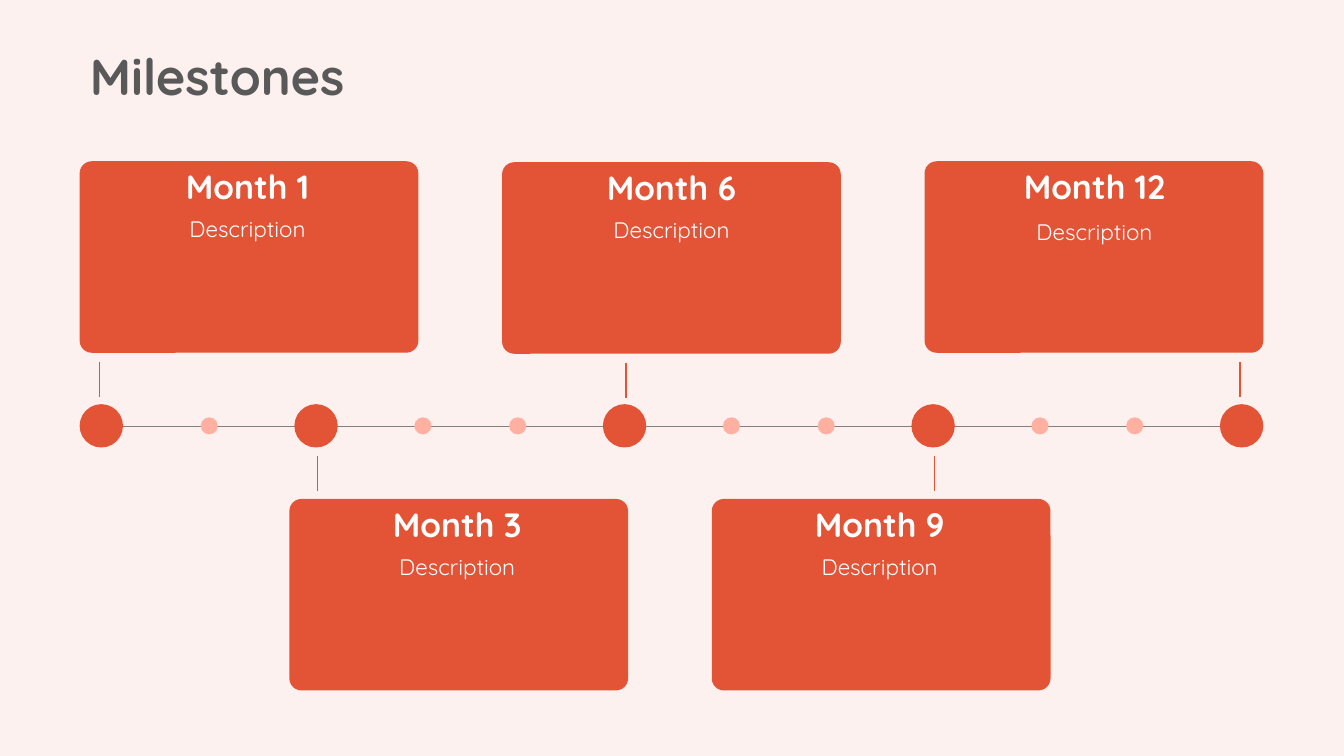
from dataclasses import dataclass

from lxml.etree import SubElement
from pptx import Presentation
from pptx.dml.color import RGBColor
from pptx.enum.shapes import MSO_CONNECTOR, MSO_SHAPE
from pptx.enum.text import MSO_ANCHOR, MSO_AUTO_SIZE, PP_ALIGN
from pptx.oxml.ns import qn
from pptx.slide import Slide
from pptx.text.text import TextFrame
from pptx.util import Inches, Pt

COLOURS = {
    "background": "FDF1EF",
    "title": "595959",
    "accent": "E35336",
    "minor": "FFB0A1",
    "axis": "808080",
    "label": "FFFFFF",
}
FONT = "Quicksand"
CARD_WIDTH, CARD_HEIGHT = 3.36, 1.9
DOT_SIZE, MINOR_SIZE = 0.43, 0.17
DOT_TOP, MINOR_TOP, AXIS_Y = 4.01, 4.14, 4.23
TICK_LENGTH = 0.35
FIRST_DOT, SECOND_DOT, QUARTER = 0.79, 2.92, 3.06
QUARTER_DOTS = [SECOND_DOT + QUARTER * step for step in range(4)]
MINOR_OFFSETS = (1.19, 2.13)


@dataclass
class Milestone:
    month: str
    left: float
    top: float
    dot_left: float
    tick_x: float
    label_inset: float = 0.2
    label_width: float = 2.93
    label_height: float = 0.98
    heading_gap: float = 6

    @property
    def tick_top(self) -> float:
        above_axis = self.top < AXIS_Y
        return self.top + CARD_HEIGHT + 0.09 if above_axis else self.top - 0.08 - TICK_LENGTH


MILESTONES = [
    Milestone("Month 1", 0.79, 1.6, FIRST_DOT, 0.99),
    Milestone("Month 3", 2.87, 4.95, QUARTER_DOTS[0], 3.15),
    Milestone("Month 6", 4.98, 1.61, QUARTER_DOTS[1], 6.21, 0.17, 3.02),
    Milestone("Month 9", 7.06, 4.95, QUARTER_DOTS[2], 9.27),
    Milestone("Month 12", 9.17, 1.6, QUARTER_DOTS[3], 12.3, 0.11, 3.15, 1.29, 8),
]


def colour(name: str) -> RGBColor:
    return RGBColor.from_string(COLOURS[name])


def set_attributes(target: object, values: dict) -> None:
    for name, value in values.items():
        setattr(target, name, value)


def prepare_frame(frame: TextFrame) -> None:
    set_attributes(frame, {
        "word_wrap": True,
        "auto_size": MSO_AUTO_SIZE.SHAPE_TO_FIT_TEXT,
        "vertical_anchor": MSO_ANCHOR.TOP,
        "margin_left": Inches(0.1),
        "margin_right": Inches(0.1),
        "margin_top": Inches(0.05),
        "margin_bottom": Inches(0.05),
    })


def write_line(frame: TextFrame, index: int, text: str, size: float, bold: bool,
               colour_name: str, layout: dict) -> None:
    """Write one paragraph, adding it when the frame has none at that index."""
    para = frame.paragraphs[0] if index == 0 else frame.add_paragraph()
    set_attributes(para, layout)
    span = para.add_run()
    span.text = text
    set_attributes(span.font, {"name": FONT, "size": Pt(size), "bold": bold})
    span.font.color.rgb = colour(colour_name)


def add_title(page: Slide, text: str) -> None:
    title = page.shapes.title
    set_attributes(title, {"left": Inches(0.79), "top": Inches(0.4),
                           "width": Inches(9.3), "height": Inches(0.71)})
    prepare_frame(title.text_frame)
    write_line(title.text_frame, 0, text, 36, True, "title", {"alignment": PP_ALIGN.LEFT})


def add_line(page: Slide, x1: float, y1: float, x2: float, y2: float, colour_name: str) -> None:
    line = page.shapes.add_connector(
        MSO_CONNECTOR.STRAIGHT, Inches(x1), Inches(y1), Inches(x2), Inches(y2))
    line.line.color.rgb = colour(colour_name)
    line.line.width = Pt(1)
    SubElement(line.element.spPr, qn("a:effectLst"))


def add_filled(page: Slide, kind: MSO_SHAPE, left: float, top: float,
               width: float, height: float, colour_name: str):
    shape = page.shapes.add_shape(
        kind, Inches(left), Inches(top), Inches(width), Inches(height))
    shape.fill.solid()
    shape.fill.fore_color.rgb = colour(colour_name)
    shape.line.fill.background()
    shape.shadow.inherit = False
    return shape


def add_card(page: Slide, milestone: Milestone) -> None:
    card = add_filled(page, MSO_SHAPE.ROUNDED_RECTANGLE, milestone.left, milestone.top,
                      CARD_WIDTH, CARD_HEIGHT, "accent")
    card.adjustments[0] = 0.063
    box = page.shapes.add_textbox(
        Inches(milestone.left + milestone.label_inset), Inches(milestone.top),
        Inches(milestone.label_width), Inches(milestone.label_height))
    frame = box.text_frame
    prepare_frame(frame)
    write_line(frame, 0, milestone.month, 24, True, "label", {
        "alignment": PP_ALIGN.CENTER,
        "space_before": Pt(9),
        "space_after": Pt(milestone.heading_gap),
    })
    write_line(frame, 1, "Description", 16, False, "label", {"alignment": PP_ALIGN.CENTER})


def add_milestone(page: Slide, milestone: Milestone) -> None:
    add_card(page, milestone)
    add_filled(page, MSO_SHAPE.OVAL, milestone.dot_left, DOT_TOP, DOT_SIZE, DOT_SIZE, "accent")
    add_line(page, milestone.tick_x, milestone.tick_top,
             milestone.tick_x, milestone.tick_top + TICK_LENGTH, "accent")


def main() -> None:
    deck = Presentation()
    deck.slide_width, deck.slide_height = Inches(13.33), Inches(7.5)
    page = deck.slides.add_slide(deck.slide_layouts.get_by_name("Title Only"))
    page.background.fill.solid()
    page.background.fill.fore_color.rgb = colour("background")

    add_title(page, "Milestones")
    add_line(page, 0.99, AXIS_Y, 12.3, AXIS_Y, "axis")
    for milestone in MILESTONES:
        add_milestone(page, milestone)
    minor_dots = [1.99] + [dot + offset for dot in QUARTER_DOTS[:-1] for offset in MINOR_OFFSETS]
    for left in minor_dots:
        add_filled(page, MSO_SHAPE.OVAL, left, MINOR_TOP, MINOR_SIZE, MINOR_SIZE, "minor")

    deck.save("out.pptx")


if __name__ == "__main__":
    main()
